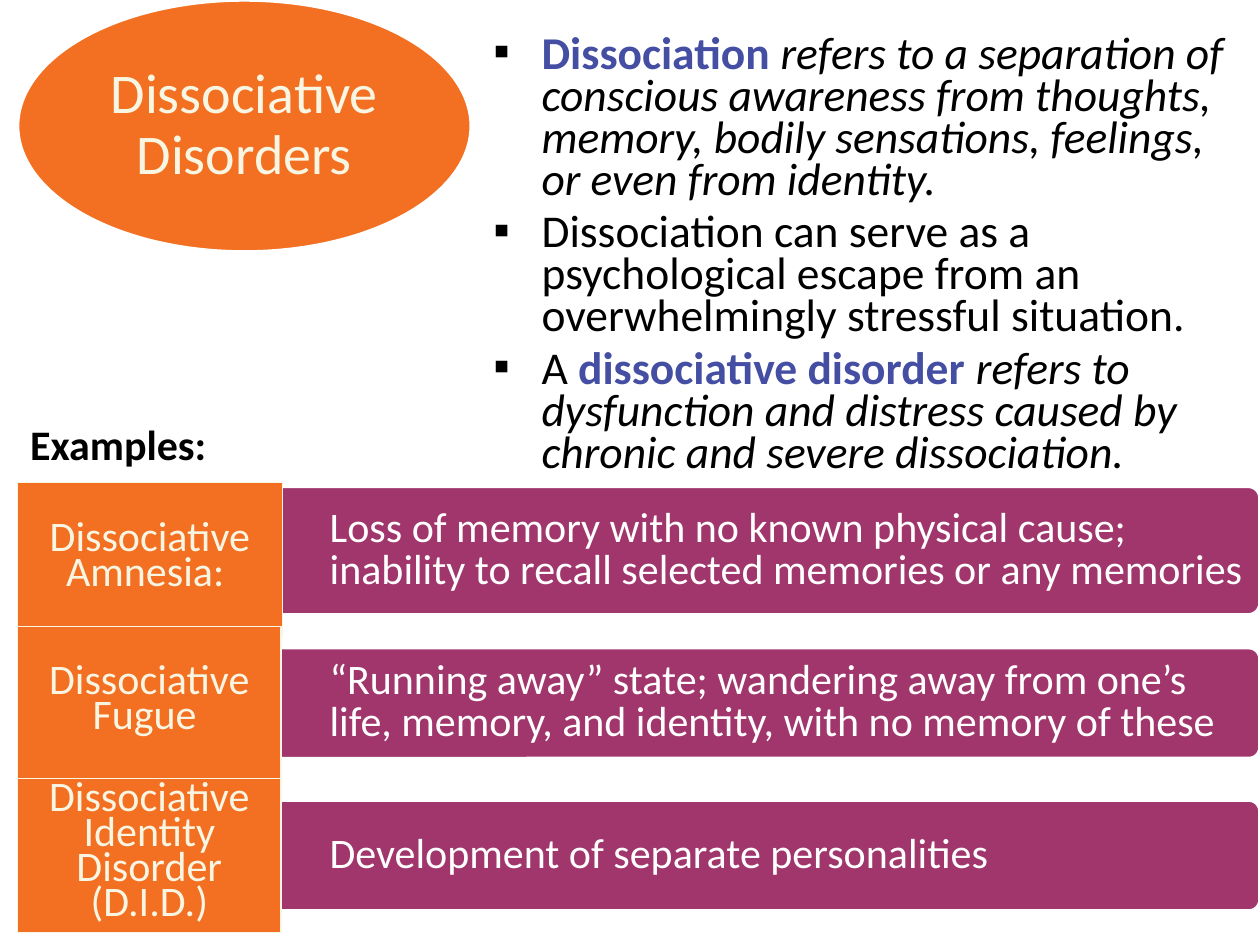
"""Build the Dissociative Disorders slide with definitions and three examples."""
from lxml.etree import SubElement
from pptx import Presentation
from pptx.dml.color import RGBColor
from pptx.enum.shapes import MSO_SHAPE as Shape
from pptx.enum.text import MSO_ANCHOR as Anchor, PP_ALIGN as Align
from pptx.oxml.ns import qn
from pptx.util import Pt

PX = 9144
ORANGE, PURPLE, CREAM, BLUE = "F36F21", "A0366C", "F8F6E3", "444EA2"
WHITE, BLACK = "FFFFFF", "000000"


def paint(target, color, size=None):
    if size:
        target.name, target.size = "Calibri", Pt(size)
        target = target.fill
    target.solid()
    target.fore_color.rgb = RGBColor.from_string(color)


def add_block(kind, box, fill, line, text, size, color, align, spacing):
    block = slide.shapes.add_shape(kind, *[v * PX for v in box])
    block.shadow.inherit = False
    paint(block.fill, fill)
    paint(block.line.fill, line[0])
    block.line.width = Pt(line[1])
    frame = block.text_frame
    frame.text, frame.word_wrap = text, True
    frame.vertical_anchor = Anchor.MIDDLE
    paragraph = frame.paragraphs[0]
    paragraph.alignment, paragraph.line_spacing = align, spacing
    paint(paragraph.runs[0].font, color, size)
    return block


deck = Presentation()
deck.slide_width, deck.slide_height = 1000 * PX, 750 * PX
slide = deck.slides.add_slide(deck.slide_layouts[6])

definitions = [
    [("Dissociation ", "term"),
     ("refers to a separation of conscious awareness from thoughts, memory, "
      "bodily sensations, feelings, or even from identity.", "meaning")],
    [("Dissociation can serve as a psychological escape from an "
      "overwhelmingly stressful situation.", "plain")],
    [("A ", "plain"), ("dissociative disorder ", "term"),
     ("refers to dysfunction and distress caused by chronic and severe "
      "dissociation.", "meaning")],
]
body = slide.shapes.add_textbox(382 * PX, 24 * PX, 603 * PX, 403 * PX).text_frame
body.word_wrap = True
for i, parts in enumerate(definitions):
    paragraph = body.add_paragraph() if i else body.paragraphs[0]
    paragraph.line_spacing, paragraph.space_after = Pt(24), Pt(6)
    props = paragraph._p.get_or_add_pPr()
    props.set("marL", str(38 * PX))
    props.set("indent", str(-38 * PX))
    bullet_color = SubElement(props, qn("a:buClr"))
    SubElement(bullet_color, qn("a:srgbClr")).set("val", BLACK)
    SubElement(props, qn("a:buFont")).set("typeface", "Calibri")
    SubElement(props, qn("a:buChar")).set("char", "▪")
    for words, role in parts:
        run = paragraph.add_run()
        run.text = words
        paint(run.font, BLUE if role == "term" else BLACK, 26)
        run.font.bold, run.font.italic = role == "term", role == "meaning"

title = add_block(Shape.OVAL, (14, 0, 360, 200), ORANGE, (WHITE, 2),
                  "Dissociative Disorders", 32, CREAM, Align.CENTER, 0.9)
margins = title.text_frame
margins.margin_left = margins.margin_right = 19 * PX
margins.margin_top = margins.margin_bottom = 19 * PX

examples = [
    ("Dissociative Amnesia: ", 383, 210, Anchor.MIDDLE, 386, 102,
     "Loss of memory with no known physical cause; inability to recall "
     "selected memories or any memories"),
    ("Dissociative Fugue ", 497, 209, Anchor.MIDDLE, 514, 88,
     "“Running away” state; wandering away from one’s life, memory, and "
     "identity, with no memory of these"),
    ("Dissociative Identity Disorder (D.I.D.)", 618, 209, Anchor.TOP, 635, 88,
     "Development of separate personalities"),
]
for name, name_top, name_width, anchor, top, height, description in examples:
    bar = add_block(Shape.ROUNDED_RECTANGLE, (51, top, 949, height), PURPLE,
                    (WHITE, 2), description, 24, WHITE, Align.LEFT, Pt(24))
    bar.adjustments[0] = round(9 / height, 2)
    inset = bar.text_frame
    inset.margin_left = 208 * PX
    inset.margin_right = inset.margin_top = inset.margin_bottom = 9 * PX
    label = add_block(Shape.RECTANGLE, (14, name_top, name_width, 122), ORANGE,
                      (CREAM, 0.75), name, 24, CREAM, Align.CENTER, Pt(20))
    label.text_frame.vertical_anchor = anchor

heading = slide.shapes.add_textbox(14 * PX, 327 * PX, 269 * PX, 50 * PX).text_frame
heading.text, heading.word_wrap = "Examples:", True
heading_font = heading.paragraphs[0].runs[0].font
paint(heading_font, BLACK, 24)
heading_font.bold = True

deck.save("out.pptx")
